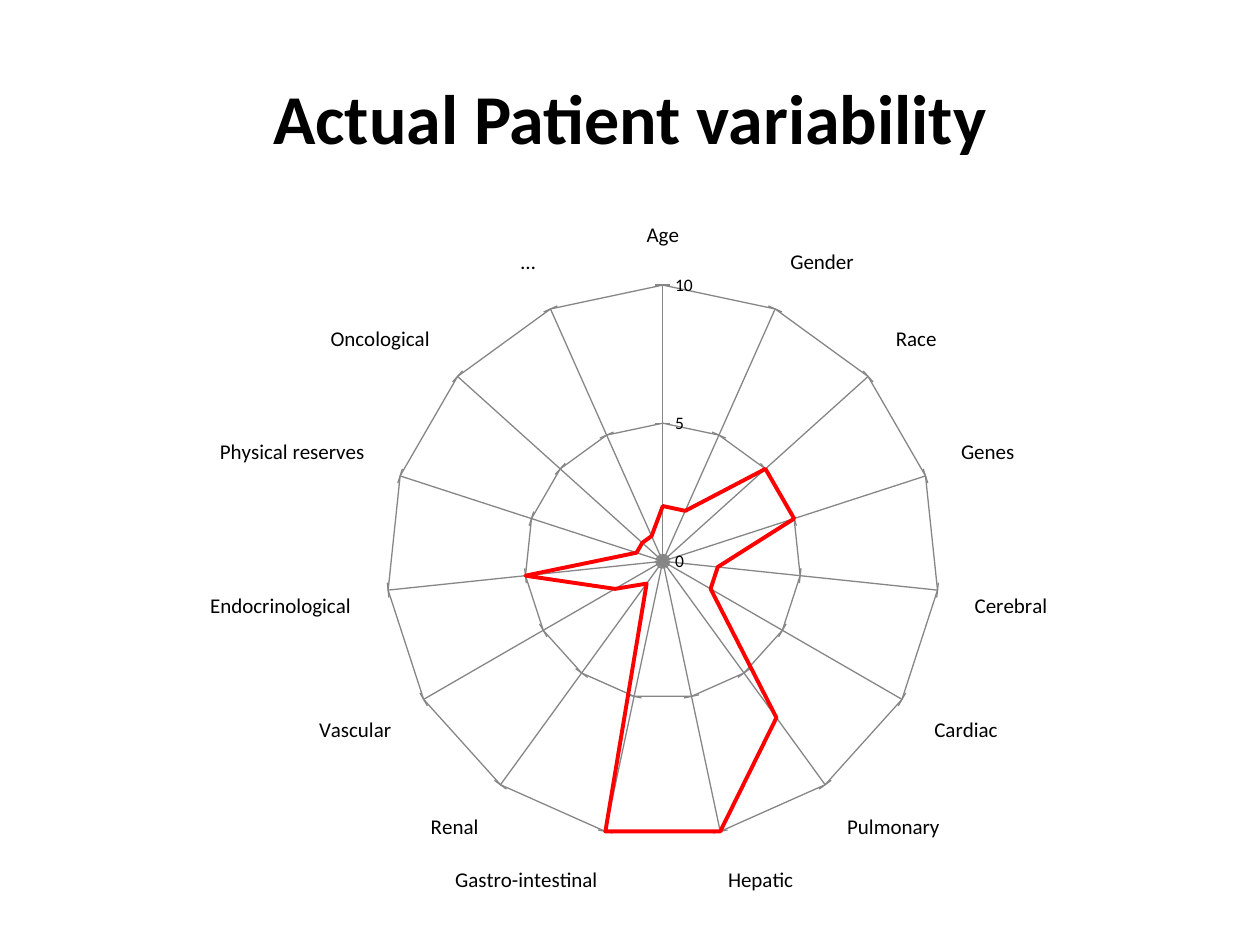
from lxml import etree
from pptx import Presentation
from pptx.chart.data import CategoryChartData
from pptx.dml.color import RGBColor
from pptx.enum.chart import XL_CHART_TYPE, XL_MARKER_STYLE, XL_TICK_MARK
from pptx.enum.text import MSO_ANCHOR, PP_ALIGN
from pptx.oxml.ns import qn
from pptx.util import Cm, Pt

RADAR = XL_CHART_TYPE.RADAR
NO_MARKER = XL_MARKER_STYLE.NONE
TICK_CROSS = XL_TICK_MARK.CROSS
TICK_OUTSIDE = XL_TICK_MARK.OUTSIDE
MIDDLE = MSO_ANCHOR.MIDDLE
CENTER = PP_ALIGN.CENTER

BLACK = RGBColor(0x00, 0x00, 0x00)
GRAY = RGBColor(0x86, 0x86, 0x86)
RED = RGBColor(0xFF, 0x00, 0x00)

PATIENT_SCORES = {
    "Age": 2,
    "Gender": 2,
    "Race": 5,
    "Genes": 5,
    "Cerebral": 2,
    "Cardiac": 2,
    "Pulmonary": 7,
    "Hepatic": 10,
    "Gastro-intestinal": 10,
    "Renal": 1,
    "Vascular": 2,
    "Endocrinological": 5,
    "Physical reserves": 1,
    "Oncological": 1,
    "…": 1,
}
PLOT_LAYOUT = {
    "layoutTarget": "inner",
    "xMode": "edge",
    "yMode": "edge",
    "x": 0.21,
    "y": 0.14,
    "w": 0.61,
    "h": 0.76,
}


def apply_format(target, values):
    for name, value in values.items():
        setattr(target, name, value)


class SlideBuilder:
    font_name = "Calibri"
    text_color = BLACK

    def __init__(self, slide):
        self.slide = slide

    def style_font(self, font, size, bold=False):
        apply_format(font, {"name": self.font_name, "size": Pt(size), "bold": bold})
        font.color.rgb = self.text_color

    def style_line(self, line, color, width):
        line.color.rgb = color
        line.width = Pt(width)

    def add_title(self, text, left, top, width, height):
        shape = self.slide.shapes.add_textbox(left, top, width, height)
        apply_format(shape.text_frame, {"word_wrap": True, "vertical_anchor": MIDDLE})
        paragraph = shape.text_frame.paragraphs[0]
        apply_format(paragraph, {"text": text, "alignment": CENTER})
        self.style_font(paragraph.runs[0].font, 40, bold=True)

    def add_radar(self, scores, left, top, width, height):
        chart_data = CategoryChartData()
        chart_data.categories = list(scores)
        chart_data.add_series("Series 1", list(scores.values()))
        chart = self.slide.shapes.add_chart(
            RADAR, left, top, width, height, chart_data
        ).chart
        apply_format(chart, {"has_title": False, "has_legend": False})
        self.style_font(chart.font, 10)
        plot = chart.plots[0]
        plot.vary_by_categories = False
        series = plot.series[0]
        series.smooth = False
        series.marker.style = NO_MARKER
        self.style_line(series.format.line, RED, 2.25)
        self.style_axis(chart.category_axis, 12, {"major_tick_mark": TICK_OUTSIDE})
        self.style_axis(chart.value_axis, 10, {
            "minimum_scale": 0,
            "maximum_scale": 10,
            "major_unit": 5,
            "major_tick_mark": TICK_CROSS,
        })
        self.place_plot(chart)

    def style_axis(self, axis, size, values):
        apply_format(axis, {"has_major_gridlines": True, **values})
        self.style_font(axis.tick_labels.font, size)
        for line in (axis.format.line, axis.major_gridlines.format.line):
            self.style_line(line, GRAY, 0.75)

    def place_plot(self, chart):
        plot_area = chart.element.find(".//" + qn("c:plotArea"))
        for old_layout in plot_area.findall(qn("c:layout")):
            plot_area.remove(old_layout)
        layout = etree.Element(qn("c:layout"))
        manual_layout = etree.SubElement(layout, qn("c:manualLayout"))
        for name, value in PLOT_LAYOUT.items():
            etree.SubElement(manual_layout, qn("c:" + name), val=str(value))
        plot_area.insert(0, layout)


def main():
    presentation = Presentation()
    presentation.slide_width = Cm(25.4)
    presentation.slide_height = Cm(19.05)
    builder = SlideBuilder(presentation.slides.add_slide(presentation.slide_layouts[6]))
    builder.add_radar(PATIENT_SCORES, Cm(3.96), Cm(3.58), Cm(18.26), Cm(14.88))
    builder.add_title(
        "Actual Patient variability", Cm(1.27), Cm(0.76), Cm(22.86), Cm(3.18)
    )
    presentation.save("out.pptx")


if __name__ == "__main__":
    main()
